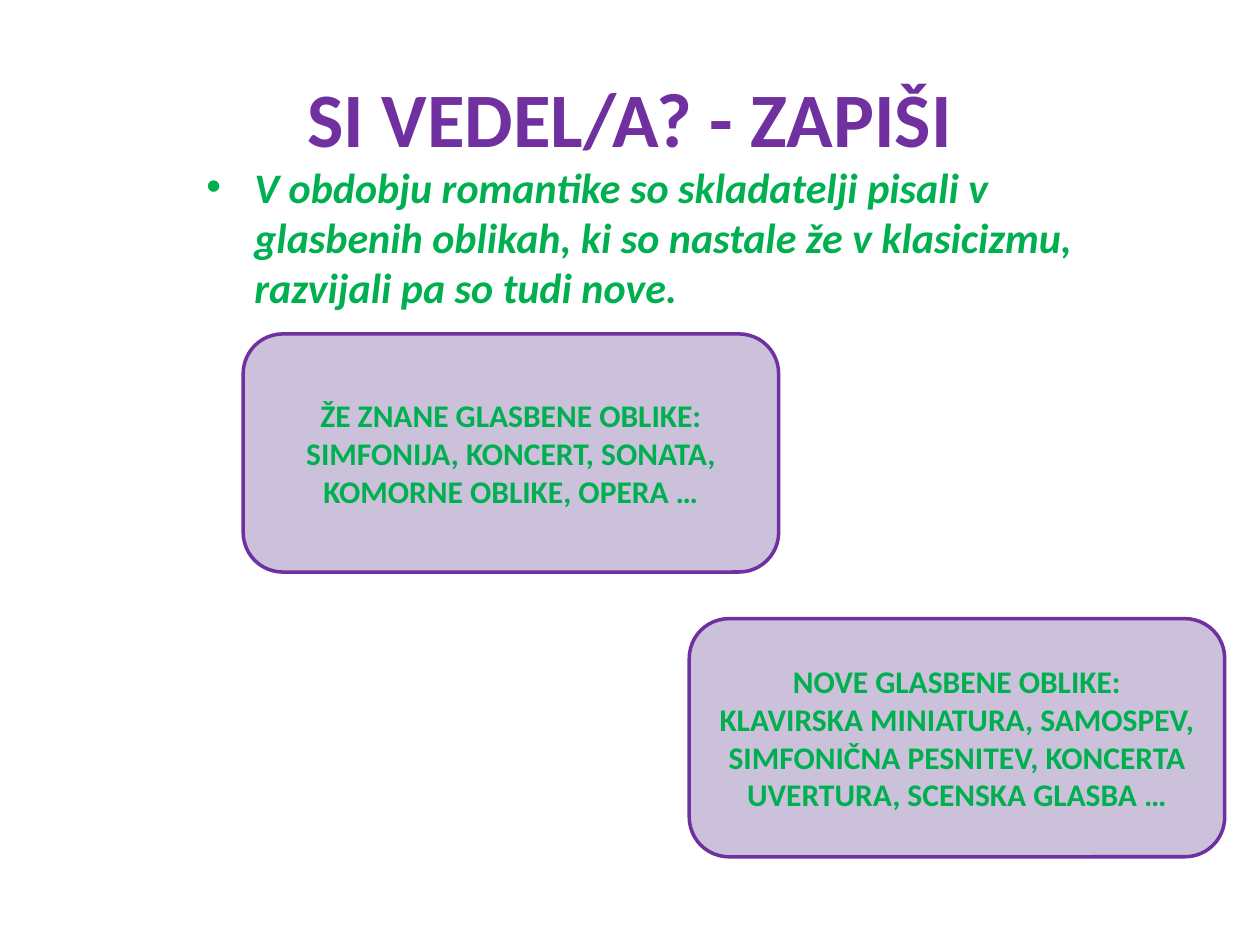
from lxml.etree import SubElement
from pptx import Presentation
from pptx.dml.color import RGBColor
from pptx.enum.shapes import MSO_SHAPE
from pptx.enum.text import MSO_ANCHOR, PP_ALIGN
from pptx.oxml.ns import qn
from pptx.util import Inches, Pt

PURPLE, LILAC, GREEN = "7030A0", "CCC1DA", "00B050"

TITLE = "SI VEDEL/A? - ZAPIŠI"
INTRO = ("V obdobju romantike so skladatelji pisali v glasbenih oblikah, "
         "ki so nastale že v klasicizmu, razvijali pa so tudi nove.")
CARD_SIZE = (4.25, 1.89)
CARDS = [
    ((5.47, 4.91), ["NOVE GLASBENE OBLIKE:",
                    "KLAVIRSKA MINIATURA, SAMOSPEV, SIMFONIČNA PESNITEV, "
                    "KONCERTA UVERTURA, SCENSKA GLASBA …"]),
    ((1.93, 2.65), ["ŽE ZNANE GLASBENE OBLIKE:",
                    "SIMFONIJA, KONCERT, SONATA, KOMORNE OBLIKE, OPERA …"]),
]

TITLE_FONT = {"name": "Calibri", "size": Pt(44), "bold": True}
INTRO_FONT = {"name": "Calibri", "size": Pt(24), "bold": True, "italic": True}
CARD_FONT = {"name": "Calibri", "size": Pt(18), "bold": True}


def rgb(color):
    return RGBColor.from_string(color)


def write(frame, lines, font_format, color, align, anchor):
    frame.word_wrap = True
    frame.vertical_anchor = anchor
    for index, line in enumerate(lines):
        paragraph = frame.add_paragraph() if index else frame.paragraphs[0]
        paragraph.alignment = align
        run = paragraph.add_run()
        run.text = line
        for attribute, value in font_format.items():
            setattr(run.font, attribute, value)
        run.font.color.rgb = rgb(color)


def add_bullet(paragraph, indent):
    properties = paragraph._p.get_or_add_pPr()
    properties.set("marL", str(Inches(indent)))
    properties.set("indent", str(-Inches(indent)))
    SubElement(properties, qn("a:buFont"), typeface="Arial")
    SubElement(properties, qn("a:buChar"), char="•")


prs = Presentation()
prs.slide_width, prs.slide_height = Inches(10), Inches(7.5)
slide = prs.slides.add_slide(prs.slide_layouts[6])

title = slide.shapes.add_textbox(*map(Inches, (0.5, 0.3, 9, 1.25)))
write(title.text_frame, [TITLE], TITLE_FONT, PURPLE, PP_ALIGN.CENTER, MSO_ANCHOR.MIDDLE)

intro = slide.shapes.add_textbox(*map(Inches, (1.54, 1.23, 7.49, 1.61)))
add_bullet(intro.text_frame.paragraphs[0], 0.38)
write(intro.text_frame, [INTRO], INTRO_FONT, GREEN, PP_ALIGN.LEFT, MSO_ANCHOR.TOP)

for position, lines in CARDS:
    card = slide.shapes.add_shape(MSO_SHAPE.ROUNDED_RECTANGLE,
                                  *map(Inches, position + CARD_SIZE))
    card.shadow.inherit = False
    card.fill.solid()
    card.fill.fore_color.rgb = rgb(LILAC)
    card.line.color.rgb = rgb(PURPLE)
    card.line.width = Pt(2)
    write(card.text_frame, lines, CARD_FONT, GREEN, PP_ALIGN.CENTER, MSO_ANCHOR.MIDDLE)

prs.save("out.pptx")
